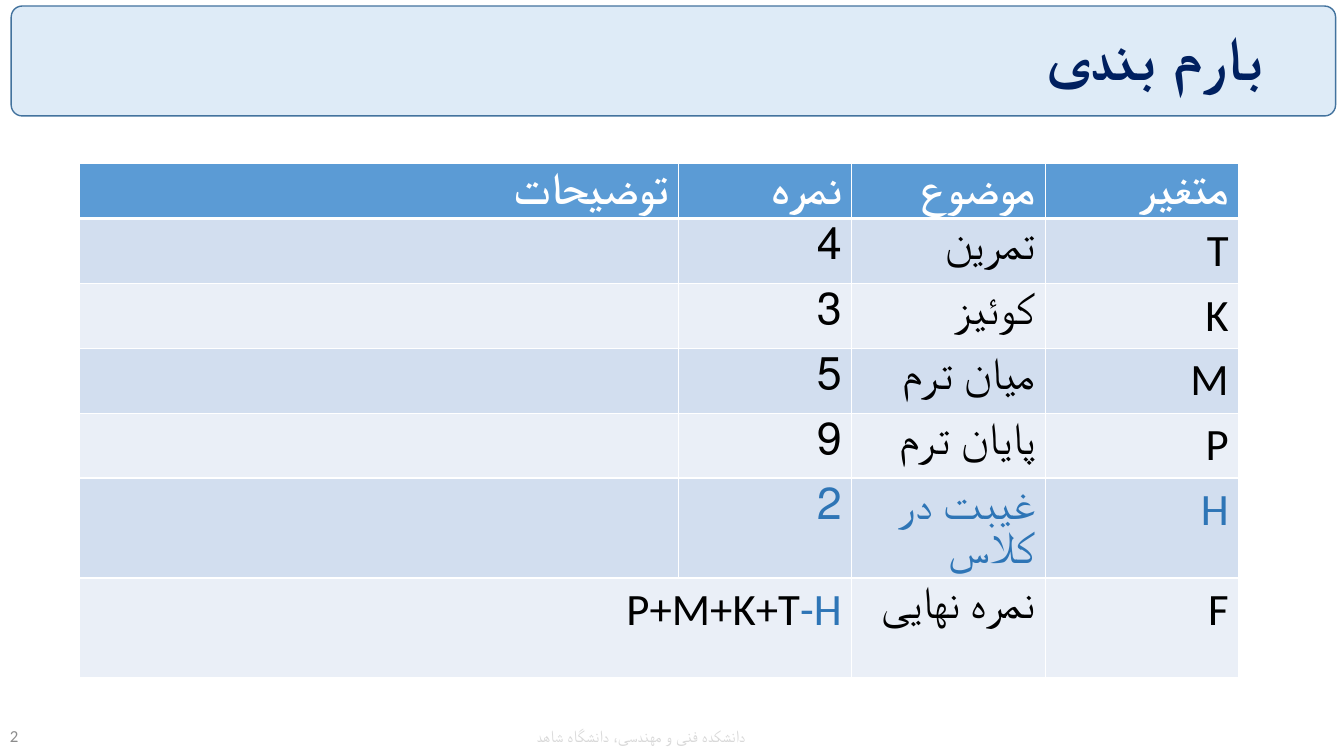
from pptx import Presentation
from pptx.dml.color import RGBColor
from pptx.enum.shapes import MSO_SHAPE
from pptx.enum.text import MSO_ANCHOR, PP_ALIGN
from pptx.oxml.ns import qn
from pptx.util import Pt
from lxml import etree

ROUND_RECT = MSO_SHAPE.ROUNDED_RECTANGLE
MIDDLE = MSO_ANCHOR.MIDDLE
LEFT, CENTER, RIGHT = PP_ALIGN.LEFT, PP_ALIGN.CENTER, PP_ALIGN.RIGHT

BLACK, WHITE, BLUE = "000000", "FFFFFF", "2E75B6"
HEADER, BANDS = "5B9BD5", ("EAEFF7", "D2DEEF")

COLUMN_WIDTHS = (427.7, 123.8, 138.2, 138.2)
ROW_HEIGHTS = (38.6, 46.2, 46.2, 46.2, 46.2, 71.4, 71.4)
GRADING = (
    ("توضیحات", "نمره", "موضوع", "متغیر"),
    ("", "4", "تمرین", "T"),
    ("", "3", "کوئیز", "K"),
    ("", "5", "میان ترم", "M"),
    ("", "9", "پایان ترم", "P"),
    ("", "2", "غیبت در کلاس", "H"),
    ("", "", "نمره نهایی", "F"),
)
ABSENCE_ROW, FINAL_ROW = 5, 6


def rgb(value):
    return RGBColor.from_string(value)


class Deck:
    font = "Calibri"

    def __init__(self, width, height):
        self.prs = Presentation()
        self.prs.slide_width, self.prs.slide_height = Pt(width), Pt(height)
        self.slide = self.prs.slides.add_slide(self.prs.slide_layouts[5])

    def format_run(self, r, size, color, bold=False):
        r.font.name, r.font.size, r.font.bold = self.font, Pt(size), bold
        r.font.color.rgb = rgb(color)

    def format_paragraph(self, p, size, color, bold=False, align=RIGHT, rtl=False):
        p.alignment = align
        if rtl:
            p._p.get_or_add_pPr().set("rtl", "1")
        for r in p.runs:
            self.format_run(r, size, color, bold)

    def title(self, text, x, y, w, h):
        sp = self.slide.shapes.title
        sp.left, sp.top, sp.width, sp.height = Pt(x), Pt(y), Pt(w), Pt(h)
        tf = sp.text_frame
        tf.text, tf.vertical_anchor, tf.word_wrap = text, MIDDLE, True
        p = tf.paragraphs[0]
        p.line_spacing = 0.9
        self.format_paragraph(p, 44, "002060", True, rtl=True)

    def banner(self, x, y, w, h):
        """Draw the rounded panel behind the title."""
        sp = self.slide.shapes.add_shape(ROUND_RECT, Pt(x), Pt(y), Pt(w), Pt(h))
        sp.adjustments[0] = 0.1
        sp.shadow.inherit = False
        sp.fill.solid()
        sp.fill.fore_color.rgb = rgb("DEEBF7")
        sp.line.color.rgb = rgb("43739E")
        sp.line.width = Pt(1)
        self.slide.shapes.title._element.addprevious(sp._element)

    def text(self, text, x, y, w, h, color, align):
        sp = self.slide.shapes.add_textbox(Pt(x), Pt(y), Pt(w), Pt(h))
        tf = sp.text_frame
        tf.text, tf.vertical_anchor, tf.word_wrap = text, MIDDLE, True
        self.format_paragraph(tf.paragraphs[0], 12, color, align=align)

    def cell_border(self, cell, side, width):
        ln = etree.SubElement(cell._tc.get_or_add_tcPr(), qn(f"a:ln{side}"), w=str(Pt(width)))
        fill = etree.SubElement(ln, qn("a:solidFill"))
        etree.SubElement(fill, qn("a:srgbClr"), val=WHITE)

    def table(self, rows, x, y, widths, heights):
        table = self.slide.shapes.add_table(
            len(rows), len(widths), Pt(x), Pt(y), Pt(sum(widths)), Pt(sum(heights))).table
        for column, width in zip(table.columns, widths):
            column.width = Pt(width)
        for i, (texts, height) in enumerate(zip(rows, heights)):
            table.rows[i].height = Pt(height)
            for j, text in enumerate(texts):
                cell = table.cell(i, j)
                for side in "LRTB":
                    thick = (i, side) in ((0, "B"), (1, "T"))
                    self.cell_border(cell, side, 3 if thick else 1)
                cell.fill.solid()
                cell.fill.fore_color.rgb = rgb(BANDS[i % 2] if i else HEADER)
                cell.text = text
                color = WHITE if i == 0 else BLUE if i == ABSENCE_ROW else BLACK
                self.format_paragraph(cell.text_frame.paragraphs[0], 32, color, i == 0, rtl=True)
        return table


def main():
    deck = Deck(960, 540)
    deck.title("بارم بندی", 17.3, 10.8, 892, 64.8)
    deck.banner(8, 4.3, 946, 78.5)

    table = deck.table(GRADING, 57, 116.8, COLUMN_WIDTHS, ROW_HEIGHTS)
    formula = table.cell(FINAL_ROW, 0)
    formula.merge(table.cell(FINAL_ROW, 1))
    p = formula.text_frame.paragraphs[0]
    for text, color in (("P+M+K+T", BLACK), ("-H", BLUE)):
        r = p.add_run()
        r.text = text
        deck.format_run(r, 32, color)

    deck.text("2", 0, 511.2, 51, 28.8, "8C8C8C", LEFT)
    deck.text("دانشکده فنی و مهندسی، دانشگاه شاهد", 260, 511.2, 396, 28.8, "D9D9D9", CENTER)
    deck.prs.save("out.pptx")


if __name__ == "__main__":
    main()
